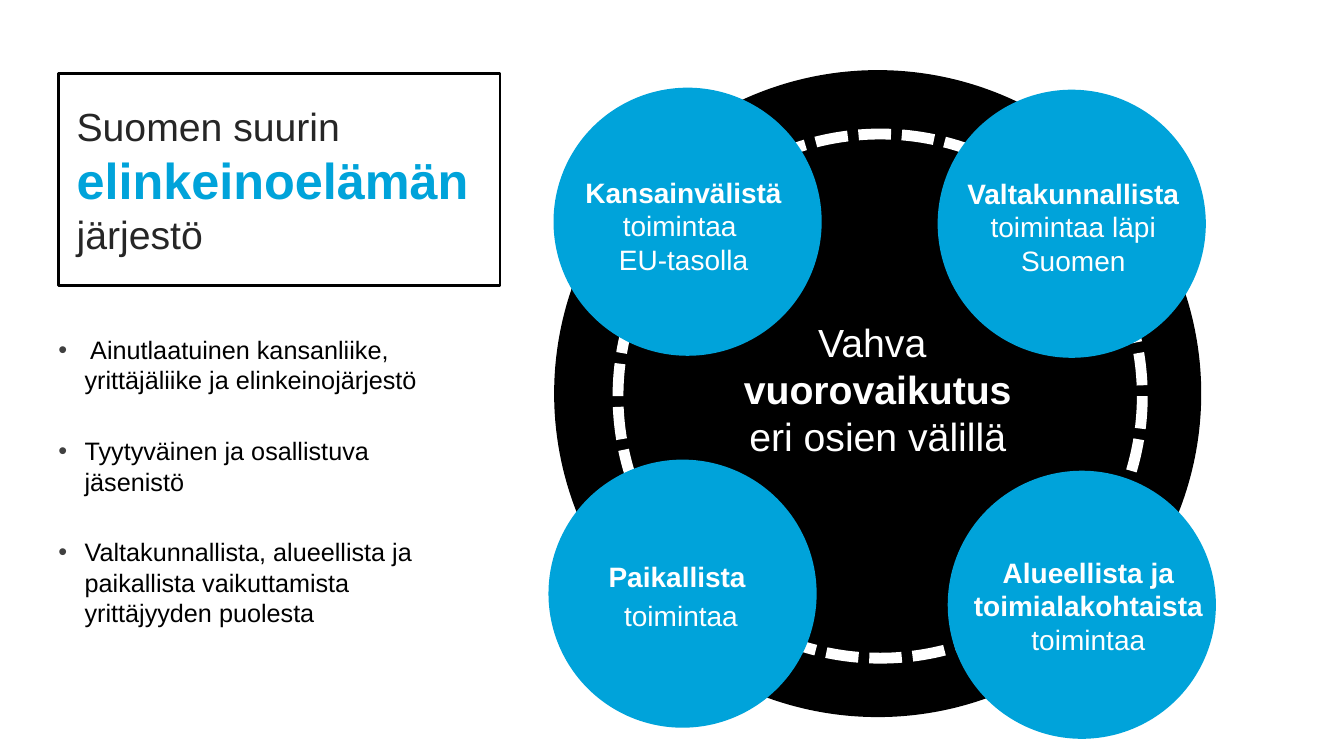
from lxml.etree import SubElement
from pptx import Presentation
from pptx.dml.color import RGBColor
from pptx.enum.dml import MSO_LINE as Dash
from pptx.enum.shapes import MSO_SHAPE as Shape
from pptx.enum.text import MSO_ANCHOR as Anchor, PP_ALIGN as Align
from pptx.oxml.ns import qn
from pptx.util import Inches, Pt

BLACK, WHITE, BLUE, GREY = "000000", "FFFFFF", "00A3DA", "262626"
BULLET_GREY = "404040"
CIRCLE_SIZE = 2.66


def color(value):
    return RGBColor.from_string(value)


def add_shape(page, kind, box, fill=None, line=None, width=2):
    shape = page.shapes.add_shape(kind, *map(Inches, box))
    shape.shadow.inherit = False
    if fill:
        shape.fill.solid()
        shape.fill.fore_color.rgb = color(fill)
    else:
        shape.fill.background()
    if line:
        shape.line.color.rgb = color(line)
        shape.line.width = Pt(width)
    else:
        shape.line.fill.background()
    return shape


def add_span(para, text, size, tint, bold=False):
    for index, line in enumerate(text.split("\n")):
        if index:
            para.add_line_break()
        if line:
            span = para.add_run()
            span.text = line
            span.font.name = "Arial"
            span.font.size = Pt(size)
            span.font.bold = bold
            span.font.color.rgb = color(tint)


def add_text(page, box, paragraphs, align=Align.LEFT, anchor=Anchor.TOP,
             side=0, edge=0.05, gap=0):
    frame = page.shapes.add_textbox(*map(Inches, box)).text_frame
    frame.word_wrap = True
    frame.vertical_anchor = anchor
    frame.margin_left = frame.margin_right = Inches(side)
    frame.margin_top = frame.margin_bottom = Inches(edge)
    for index, spans in enumerate(paragraphs):
        para = frame.add_paragraph() if index else frame.paragraphs[0]
        para.alignment = align
        if index and gap:
            para.space_before = Pt(gap)
        for span in spans:
            add_span(para, *span)
    return frame


def add_bullet(para):
    properties = para._p.get_or_add_pPr()
    properties.set("marL", str(Inches(0.26)))
    properties.set("indent", str(-Inches(0.26)))
    tint = SubElement(properties, qn("a:buClr"))
    SubElement(tint, qn("a:srgbClr"), val=BULLET_GREY)
    SubElement(properties, qn("a:buFont"), typeface="Arial")
    SubElement(properties, qn("a:buChar"), char="•")


def build_heading(page, left, top, width, height):
    spans = [("Suomen suurin\n", 28, GREY),
             ("elinkeinoelämän", 36, BLUE, True),
             ("\njärjestö", 28, GREY)]
    add_text(page, (left + 0.18, top - 0.08, width + 0.19, height - 0.2),
             [spans], anchor=Anchor.BOTTOM, edge=0)
    add_shape(page, Shape.RECTANGLE, (left, top, width, height), line=BLACK)


def build_claims(page, *box):
    claims = [" Ainutlaatuinen kansanliike, yrittäjäliike ja elinkeinojärjestö",
              "Tyytyväinen ja osallistuva jäsenistö",
              "Valtakunnallista, alueellista ja paikallista vaikuttamista "
              "yrittäjyyden puolesta"]
    frame = add_text(page, box, [[(claim, 18, BLACK)] for claim in claims], gap=29)
    for para in frame.paragraphs:
        add_bullet(para)


def build_wheel(page, left, top, size):
    ring = 0.62
    add_shape(page, Shape.OVAL, (left, top, size, size), BLACK, BLACK)
    inner = size - 2 * ring + 0.05
    dashes = add_shape(page, Shape.OVAL, (left + ring, top + ring, inner, inner),
                       BLACK, WHITE, 7.75)
    dashes.line.dash_style = Dash.SQUARE_DOT
    dashes.line._get_or_add_ln().find(qn("a:prstDash")).set("val", "sysDash")

    for x, y in [(-0.02, 0.16), (3.79, 0.18), (3.89, 3.96), (-0.07, 3.85)]:
        add_shape(page, Shape.OVAL,
                  (left + x, top + y, CIRCLE_SIZE, CIRCLE_SIZE), BLUE)

    center = [[("Vahva ", 28, WHITE)],
              [("vuorovaikutus", 28, WHITE, True)],
              [("eri osien välillä", 28, WHITE)]]
    add_text(page, (left, top + 2.4, size, 2.02), center, Align.CENTER, side=0.1)

    labels = [
        ((0.08, 0.98, 2.38, 1.11), 0.1, 0,
         [[("Kansainvälistä", 20, WHITE, True), (" toimintaa ", 20, WHITE)],
          [("EU-tasolla", 20, WHITE)]]),
        ((3.89, 0.99, 2.49, 1.37), 0, 0,
         [[("Valtakunnallista\n", 20, WHITE, True),
           ("toimintaa läpi\nSuomen", 20, WHITE)]]),
        ((-0.04, 4.79, 2.57, 1.41), 0, 4,
         [[("Paikallista ", 20, WHITE, True)], [("toimintaa", 20, WHITE)]]),
        ((4.03, 4.75, 2.51, 1.41), 0, 0,
         [[("Alueellista ja toimialakohtaista ", 20, WHITE, True),
           ("toimintaa", 20, WHITE)]]),
    ]
    for (x, y, width, height), side, gap, paragraphs in labels:
        add_text(page, (left + x, top + y, width, height), paragraphs,
                 Align.CENTER, side=side, gap=gap)


def main():
    deck = Presentation()
    deck.slide_width, deck.slide_height = Inches(13.33), Inches(7.5)
    page = deck.slides.add_slide(deck.slide_layouts[6])
    build_wheel(page, 5.51, 0.71, 6.39)
    build_heading(page, 0.58, 0.73, 4.38, 2.1)
    build_claims(page, 0.58, 3.27, 3.73, 3.73)
    deck.save("out.pptx")


if __name__ == "__main__":
    main()
